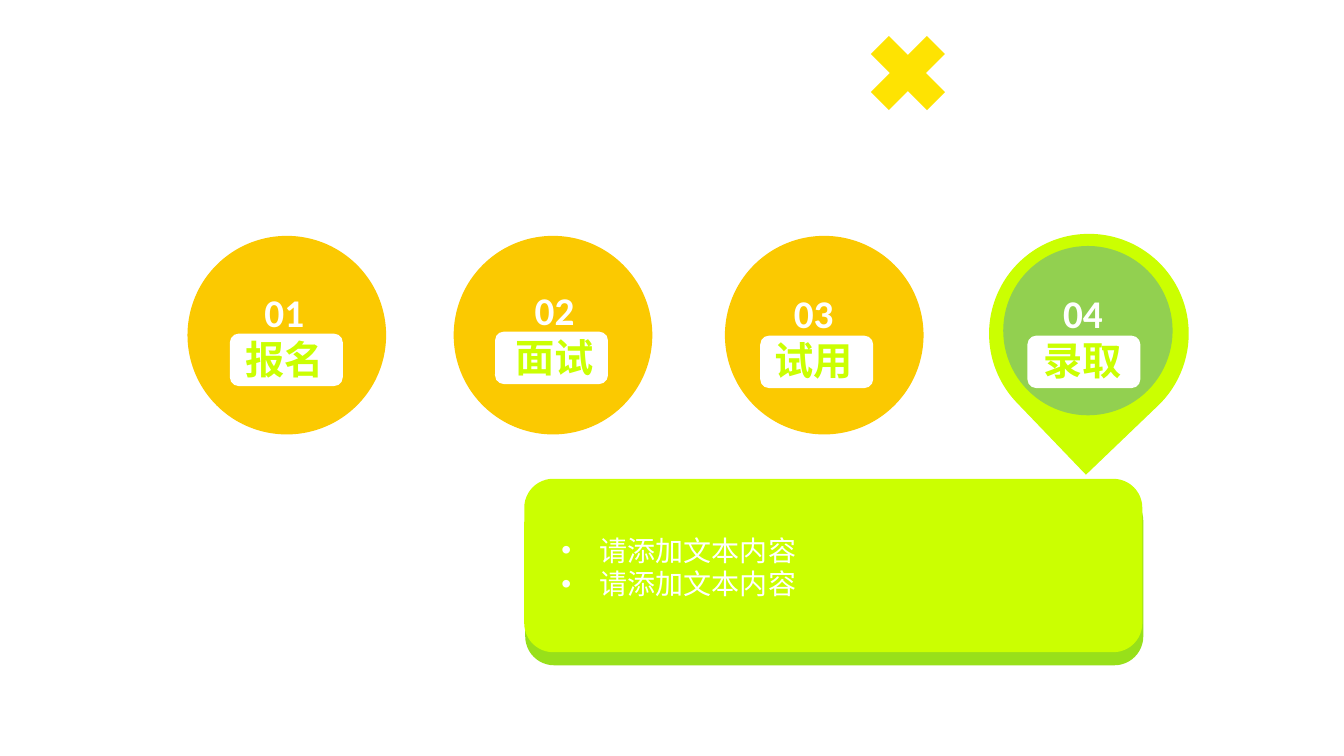
from pptx import Presentation
from pptx.dml.color import RGBColor
from pptx.enum.shapes import MSO_SHAPE as SHAPE
from pptx.enum.text import MSO_AUTO_SIZE as FIT, PP_ALIGN as ALIGN
from pptx.oxml import parse_xml
from pptx.oxml.ns import nsdecls
from pptx.util import Inches, Pt

YELLOW, ORANGE = "FEE302", "FBC901"
LIME, LIME_DARK, GREEN, WHITE = "CBFF01", "98E01A", "92D050", "FFFFFF"


def rgb(color):
    return RGBColor.from_string(color)


class Deck:
    """Holds the text style and the current slide."""

    font = "Calibri"

    def __init__(self, prs):
        self.s = prs.slides.add_slide(prs.slide_layouts[6])

    def shape(self, kind, x, y, w, h, color, adj=None, rot=0):
        sp = self.s.shapes.add_shape(kind, Inches(x), Inches(y), Inches(w), Inches(h))
        sp.shadow.inherit = False
        sp.fill.solid()
        sp.fill.fore_color.rgb = rgb(color)
        sp.line.fill.background()
        sp.rotation = rot
        if adj is not None:
            sp.adjustments[0] = adj
        return sp

    def rounded(self, x, y, w, h, color):
        return self.shape(SHAPE.ROUNDED_RECTANGLE, x, y, w, h, color, adj=0.167)

    def text(self, x, y, w, h, lines, size, bold=False, align=None, bullet=False):
        """Each line is a (text, color) pair."""
        tb = self.s.shapes.add_textbox(Inches(x), Inches(y), Inches(w), Inches(h))
        tf = tb.text_frame
        tf.word_wrap = True
        tf.auto_size = FIT.SHAPE_TO_FIT_TEXT
        for i, (words, color) in enumerate(lines):
            p = tf.add_paragraph() if i else tf.paragraphs[0]
            p.alignment = align
            if bullet:
                self.bullet(p)
            r = p.add_run()
            r.text = words
            r.font.name = self.font
            r.font.size = Pt(size)
            r.font.bold = bold
            r.font.color.rgb = rgb(color)
        return tb

    def bullet(self, p, indent=0.38):
        pPr = p._p.get_or_add_pPr()
        pPr.set("marL", str(Inches(indent)))
        pPr.set("indent", str(-Inches(indent)))
        pPr.append(parse_xml(f'<a:buFont {nsdecls("a")} typeface="Arial"/>'))
        pPr.append(parse_xml(f'<a:buChar {nsdecls("a")} char="•"/>'))


def main():
    prs = Presentation()
    prs.slide_width, prs.slide_height = Inches(13.33), Inches(7.5)
    deck = Deck(prs)

    # Cross at the top
    deck.shape(SHAPE.MATH_MULTIPLY, 8.47, 0.19, 1.07, 1.07, YELLOW)

    # Circles of the first three steps
    for x in (1.86, 4.5, 7.19):
        deck.shape(SHAPE.OVAL, x, 2.34, 1.97, 1.97, ORANGE)

    # Detail panel with its darker lower edge
    deck.rounded(5.21, 4.88, 6.13, 1.72, LIME_DARK)
    deck.rounded(5.2, 4.75, 6.13, 1.72, LIME)

    # Pin of the current step, pointing at the panel
    deck.shape(SHAPE.TEAR, 9.81, 2.32, 1.98, 1.98, LIME, rot=136.2)
    deck.shape(SHAPE.OVAL, 9.95, 2.44, 1.68, 1.68, GREEN)

    # Step labels: name, plate position, text position
    steps = [
        ("报名", (2.28, 3.31), (2.26, 2.81)),
        ("面试", (4.91, 3.29), (4.94, 2.79)),
        ("试用", (7.54, 3.33), (7.51, 2.82)),
        ("录取", (10.19, 3.33), (10.18, 2.82)),
    ]
    for number, (name, plate, label) in enumerate(steps, 1):
        deck.rounded(*plate, 1.12, 0.52, WHITE)
        deck.text(*label, 1.12, 1.04, [(f"{number:02}", WHITE), (name, LIME)],
                  28, bold=True, align=ALIGN.CENTER)

    # Panel text
    deck.text(5.47, 5.24, 6.52, 0.77, [("请添加文本内容", WHITE)] * 2, 20, bullet=True)

    prs.save("out.pptx")


if __name__ == "__main__":
    main()
